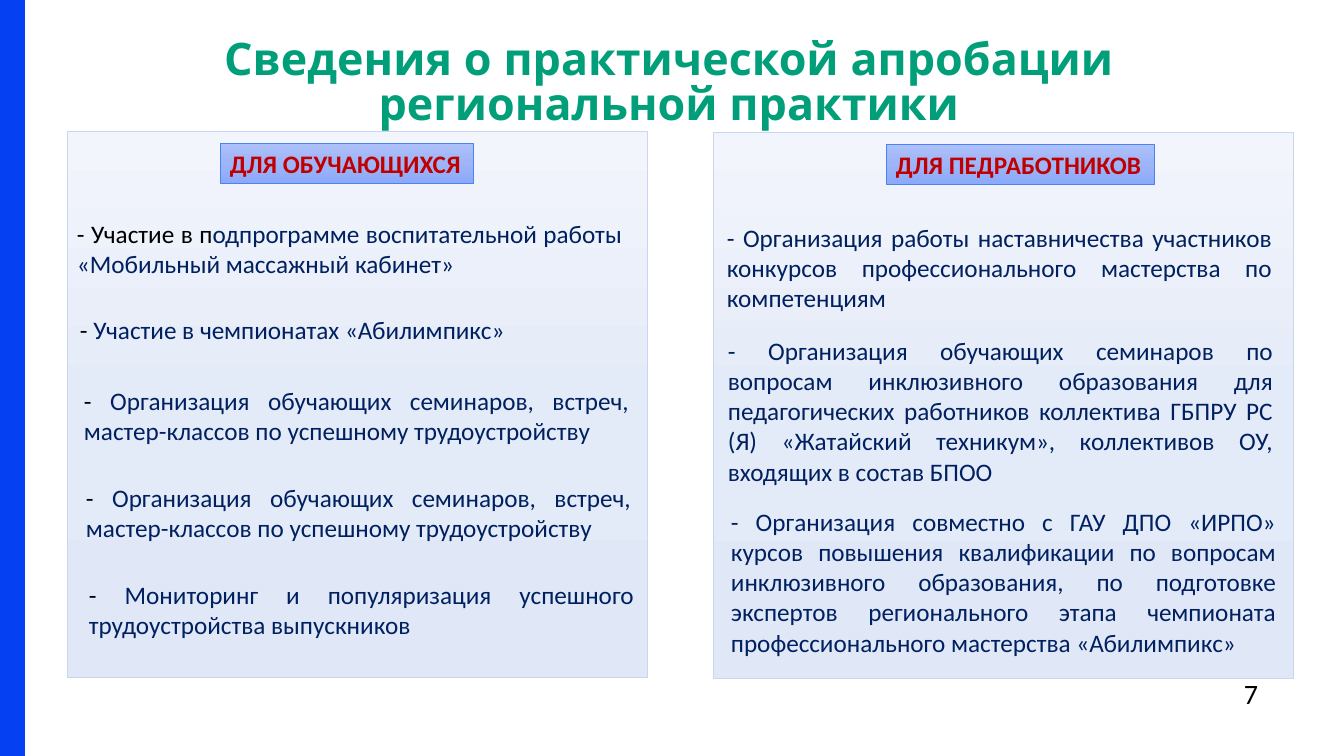
from copy import deepcopy

from pptx import Presentation
from pptx.dml.color import RGBColor
from pptx.enum.shapes import MSO_SHAPE
from pptx.enum.text import MSO_ANCHOR, PP_ALIGN
from pptx.oxml.ns import qn
from pptx.util import Pt

PX = 914400 / 100.8
RECT = MSO_SHAPE.RECTANGLE
TOP = MSO_ANCHOR.TOP
LEFT, CENTER, JUSTIFY = PP_ALIGN.LEFT, PP_ALIGN.CENTER, PP_ALIGN.JUSTIFY

COLORS = {
    "bar": "0540F2", "title": "009F79", "heading": "C00000",
    "navy": "002060", "black": "000000",
    "panel_line": "C8D6F1", "heading_line": "4B83F1",
}
PANEL_STOPS = ["F2F5FC", "E4EBF8", "E0E8F8"]
HEADING_STOPS = ["ADC1FA", "9EB5F7", "8CA9FA"]

SEMINARS = ("- ", "Организация обучающих семинаров, встреч, "
            "мастер-классов по успешному трудоустройству")
# Each item: offset from the panel's corner, height, dark lead, text
STUDENT_ITEMS = [
    (0, 82, 71, "- Участие в п",
     "одпрограмме воспитательной работы «Мобильный массажный кабинет»"),
    (3, 178, 40, "- ", "Участие в чемпионатах «Абилимпикс»"),
    (7, 249, 71, *SEMINARS),
    (9, 346, 71, *SEMINARS),
    (12, 443, 71, "- ",
     "Мониторинг и популяризация успешного трудоустройства выпускников"),
]
TEACHER_ITEMS = [
    (4, 85, 102, "",
     "- Организация работы наставничества участников конкурсов "
     "профессионального мастерства по компетенциям"),
    (5, 198, 163, "",
     "- Организация обучающих семинаров по вопросам инклюзивного образования "
     "для педагогических работников коллектива ГБПРУ РС (Я) «Жатайский "
     "техникум», коллективов ОУ, входящих в состав БПОО"),
    (8, 369, 163, "",
     "- Организация совместно с ГАУ ДПО «ИРПО» курсов повышения квалификации "
     "по вопросам инклюзивного образования, по подготовке экспертов "
     "регионального этапа чемпионата профессионального мастерства «Абилимпикс»"),
]


def px(*lengths):
    return [round(n * PX) for n in lengths]


def rgb(value):
    return RGBColor.from_string(value)


def add_rect(slide, box, stops, line=None):
    """Rectangle with a solid fill for one stop, else a downward gradient."""
    sp = slide.shapes.add_shape(RECT, *px(*box))
    sp.shadow.inherit = False
    if len(stops) == 1:
        sp.fill.solid()
        sp.fill.fore_color.rgb = rgb(stops[0])
    else:
        sp.fill.gradient()
        sp.fill.gradient_angle = 270
        first = sp._element.spPr.find(qn("a:gradFill")).find(qn("a:gsLst"))[0]
        first.addnext(deepcopy(first))
        for i, stop in enumerate(sp.fill.gradient_stops):
            stop.color.rgb = rgb(stops[i])
            stop.position = i / (len(stops) - 1)
    if line:
        sp.line.color.rgb = rgb(COLORS[line])
        sp.line.width = Pt(0.5)
    else:
        sp.line.fill.background()
    return sp


def set_text(sp, *runs, size=18, font="Calibri", bold=False, align=LEFT,
             wrap=True, spacing=None, inset=True):
    """Fill a shape with one paragraph of (text, colour name) runs."""
    tf = sp.text_frame
    tf.word_wrap = wrap
    tf.vertical_anchor = TOP
    if not inset:
        tf.margin_left = tf.margin_right = tf.margin_top = tf.margin_bottom = 0
    p = tf.paragraphs[0]
    p.alignment = align
    if spacing:
        p.line_spacing = Pt(spacing)
    for text, color in runs:
        if not text:
            continue
        r = p.add_run()
        r.text = text
        r.font.size = Pt(size)
        r.font.name = font
        r.font.bold = bold
        r.font.color.rgb = rgb(COLORS[color])


def add_text(slide, box, *runs, **fmt):
    set_text(slide.shapes.add_textbox(*px(*box)), *runs, **fmt)


def add_panel(slide, box, heading, heading_x, heading_w, items):
    x, y, w, h = box
    add_rect(slide, box, PANEL_STOPS, "panel_line")
    tag = add_rect(slide, (x + heading_x, y + 12, heading_w, 40),
                   HEADING_STOPS, "heading_line")
    set_text(tag, (heading, "heading"), bold=True, wrap=False)
    for dx, dy, height, lead, text in items:
        add_text(slide, (x + dx, y + dy, w - 15, height),
                 (lead, "black"), (text, "navy"), align=JUSTIFY)


def add_frame(slide, width, height):
    """Side bar, title and page number."""
    add_rect(slide, (0, 0, 25, height), [COLORS["bar"]])
    add_text(slide, (68, 40, 1202, 49),
             ("Сведения о практической апробации региональной практики", "title"),
             size=32, font="League Spartan", bold=True, align=CENTER,
             spacing=32, inset=False)
    add_text(slide, (width - 110, 672, 53, 44), ("7", "black"),
             size=20, wrap=False)


def main():
    prs = Presentation()
    width, height = 1344, 756
    prs.slide_width, prs.slide_height = px(width, height)
    slide = prs.slides.add_slide(prs.slide_layouts[6])
    add_panel(slide, (67, 131, 580, 546), "ДЛЯ ОБУЧАЮЩИХСЯ", 153, 253,
              STUDENT_ITEMS)
    add_panel(slide, (713, 132, 580, 546), "ДЛЯ ПЕДРАБОТНИКОВ", 173, 268,
              TEACHER_ITEMS)
    add_frame(slide, width, height)
    prs.save("out.pptx")


if __name__ == "__main__":
    main()
